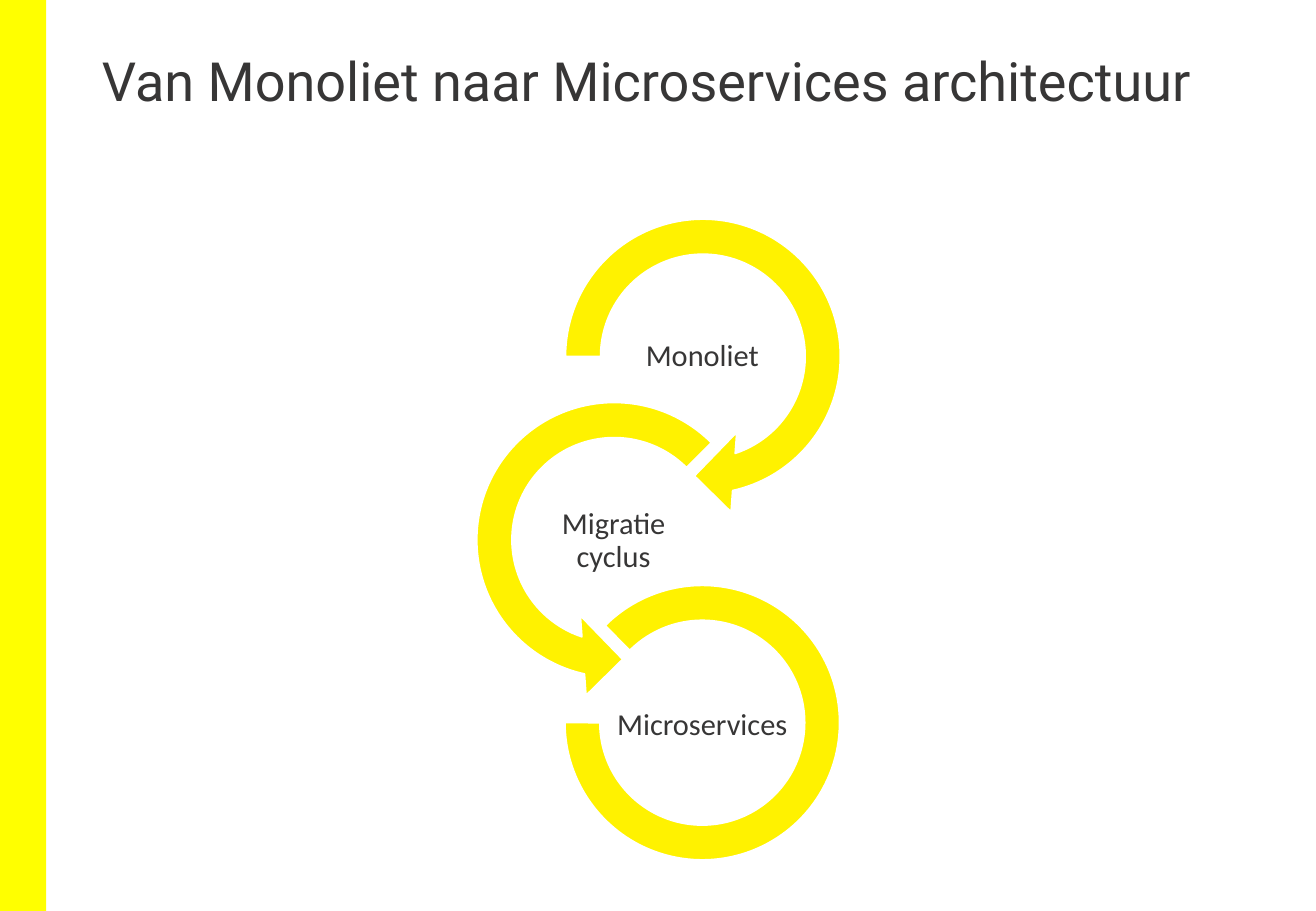
from pptx import Presentation
from pptx.dml.color import RGBColor
from pptx.enum.shapes import MSO_SHAPE
from pptx.enum.text import MSO_ANCHOR, PP_ALIGN
from pptx.util import Pt

PX = 9144
YELLOW = RGBColor(0xFF, 0xFF, 0x00)
ARROW_YELLOW = RGBColor(0xFF, 0xF2, 0x00)
WHITE = RGBColor(0xFF, 0xFF, 0xFF)
DARK = RGBColor(0x37, 0x36, 0x36)
RECTANGLE = MSO_SHAPE.RECTANGLE
RIGHT_ARROW = MSO_SHAPE.CIRCULAR_ARROW
LEFT_ARROW = MSO_SHAPE.LEFT_CIRCULAR_ARROW
ARC = MSO_SHAPE.BLOCK_ARC
TOP, MIDDLE = MSO_ANCHOR.TOP, MSO_ANCHOR.MIDDLE
LEFT, CENTER = PP_ALIGN.LEFT, PP_ALIGN.CENTER

deck = Presentation()
deck.slide_width, deck.slide_height = 1083 * PX, 750 * PX
page = deck.slides.add_slide(deck.slide_layouts[6])


def add_shape(kind, left, top, width, height, color):
    shape = page.shapes.add_shape(kind, left * PX, top * PX, width * PX, height * PX)
    shape.shadow.inherit = False
    shape.fill.solid()
    shape.fill.fore_color.rgb = color
    shape.line.fill.background()
    return shape


def add_text(text, left, top, width, height, font, size, align, anchor):
    box = page.shapes.add_textbox(left * PX, top * PX, width * PX, height * PX)
    frame = box.text_frame
    frame.word_wrap = True
    frame.vertical_anchor = anchor
    para = frame.paragraphs[0]
    para.text = text
    para.alignment = align
    para.line_spacing = 0.9
    para.font.name = font
    para.font.size = Pt(size)
    para.font.color.rgb = DARK
    return frame


add_shape(RECTANGLE, 0, 0, 38, 750, YELLOW)
add_text("Van Monoliet naar Microservices architectuur",
         74, 40, 934, 108, "Roboto", 32, LEFT, TOP)

steps = [
    ("Monoliet", RIGHT_ARROW, 447, 162, 263, (0.11, 11.42, 45, 108, 0.125), 257),
    ("Migratie cyclus", LEFT_ARROW, 374, 313, 263, (0.11, 11.42, 63, 189, 0.125), 409),
    ("Microservices", ARC, 465, 482, 226, (135, 108, 0.127), 561),
]
label_width, label_height = 146, 73
for label, kind, left, top, size, adjustments, label_top in steps:
    ring = add_shape(kind, left, top, size, size, ARROW_YELLOW)
    ring.line.color.rgb = WHITE
    ring.line.width = Pt(1)
    for index, value in enumerate(adjustments):
        ring.adjustments[index] = value
    label_left = left + (size - label_width) // 2
    frame = add_text(label, label_left, label_top, label_width, label_height,
                     "Calibri", 18, CENTER, MIDDLE)
    frame.margin_left = frame.margin_right = PX
    frame.margin_top = frame.margin_bottom = PX

deck.save("out.pptx")
